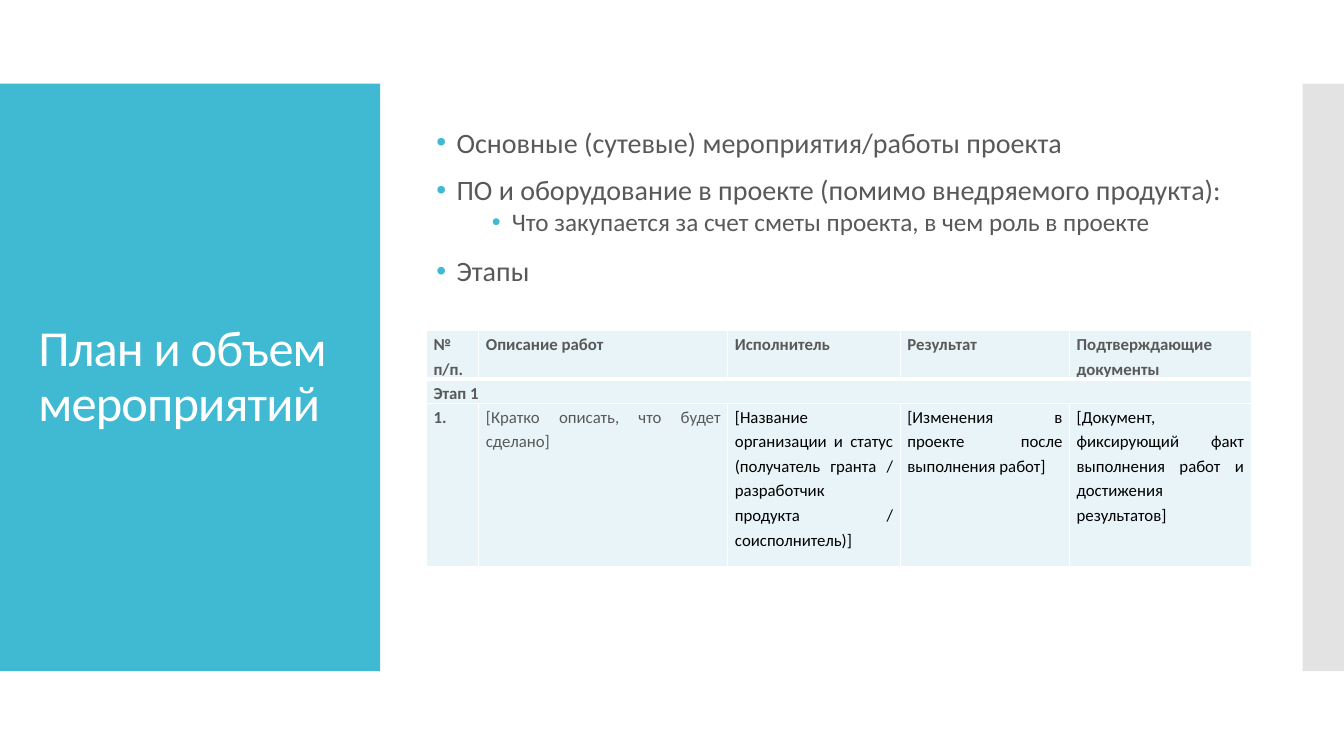
"""Build the slide with the project's plan and scope of work."""
from pptx import Presentation
from pptx.dml.color import RGBColor
from pptx.enum.shapes import MSO_SHAPE
from pptx.enum.text import MSO_ANCHOR, MSO_AUTO_SIZE, PP_ALIGN
from pptx.oxml import parse_xml
from pptx.oxml.ns import nsdecls
from pptx.util import Inches, Pt

TEAL = RGBColor(0x40, 0xBA, 0xD2)
SILVER = RGBColor(0xE3, 0xE3, 0xE3)
WHITE = RGBColor(0xFF, 0xFF, 0xFF)
GREY = RGBColor(0x59, 0x59, 0x59)
BLACK = RGBColor(0, 0, 0)
PALE = RGBColor(0xE8, 0xF4, 0xF7)
FONT = "Calibri"

TITLE = "План и объем мероприятий"
POINTS = [
    (0, "Основные (сутевые) мероприятия/работы проекта"),
    (0, "ПО и оборудование в проекте (помимо внедряемого продукта):"),
    (1, "Что закупается за счет сметы проекта, в чем роль в проекте"),
    (0, "Этапы"),
]
LEVELS = [
    {"size": 20, "left": 0.2, "before": 12, "after": 0},
    {"size": 18, "left": 0.75, "before": 2.5, "after": 2.5},
]
ROWS = [
    ["№ п/п.", "Описание работ", "Исполнитель", "Результат",
     "Подтверждающие документы"],
    ["Этап 1"],
    ["1. ", "[Кратко описать, что будет сделано]",
     "[Название организации и статус (получатель гранта / "
     "разработчик продукта / соисполнитель)]",
     "[Изменения в проекте после выполнения работ]",
     "[Документ, фиксирующий факт выполнения работ и достижения результатов]"],
]
WIDTHS = [0.52, 2.47, 1.71, 1.68, 1.8]
HEIGHTS = [0.43, 0.21, 1.62]
BARS = [(0, 3.77, TEAL), (12.92, 0.42, SILVER)]


def add_run(para, text, size, color, bold=False):
    """Add one styled run to a paragraph."""
    run = para.add_run()
    run.text = text
    font = run.font
    font.name, font.size, font.bold = FONT, Pt(size), bold
    font.color.rgb = color
    return run


def add_bars(slide):
    """Draw the two side panels."""
    for left, width, color in BARS:
        bar = slide.shapes.add_shape(
            MSO_SHAPE.RECTANGLE, Inches(left), Inches(0.83),
            Inches(width), Inches(5.83))
        bar.shadow.inherit = False
        bar.fill.solid()
        bar.fill.fore_color.rgb = color
        bar.line.fill.background()


def add_title(slide):
    """Place the title over the left panel."""
    title = slide.shapes.title
    title.left, title.top = Inches(0.28), Inches(1.23)
    title.width, title.height = Inches(3.22), Inches(5.03)
    slide.shapes._spTree.append(title._element)
    frame = title.text_frame
    frame.word_wrap = True
    frame.auto_size = MSO_AUTO_SIZE.NONE
    frame.vertical_anchor = MSO_ANCHOR.MIDDLE
    para = frame.paragraphs[0]
    para.alignment, para.line_spacing = PP_ALIGN.LEFT, 0.9
    run = add_run(para, TITLE, 36, WHITE)
    run._r.get_or_add_rPr().set("spc", "-60")


def add_points(slide):
    """Write the bulleted list."""
    box = slide.shapes.add_textbox(
        Inches(4.23), Inches(0.94), Inches(8), Inches(2.25))
    frame = box.text_frame
    frame.word_wrap = True
    frame.vertical_anchor = MSO_ANCHOR.MIDDLE
    for num, (level, text) in enumerate(POINTS):
        para = frame.add_paragraph() if num else frame.paragraphs[0]
        style = LEVELS[level]
        para.level, para.line_spacing = level, 0.9
        para.space_before = Pt(style["before"])
        para.space_after = Pt(style["after"])
        props = para._p.get_or_add_pPr()
        props.set("marL", str(Inches(style["left"])))
        props.set("indent", str(-Inches(0.2)))
        for xml in (
            f'<a:buClr {nsdecls("a")}><a:srgbClr val="{TEAL}"/></a:buClr>',
            f'<a:buFont {nsdecls("a")} typeface="Arial"/>',
            f'<a:buChar {nsdecls("a")} char="•"/>',
        ):
            props.append(parse_xml(xml))
        add_run(para, text, style["size"], GREY)


def style_cell(cell, head):
    """Fill a cell and give it white borders."""
    cell.fill.solid()
    cell.fill.fore_color.rgb = PALE
    cell.margin_left = cell.margin_right = Inches(0.07)
    cell.margin_top = cell.margin_bottom = 0
    props = cell._tc.get_or_add_tcPr()
    for spot, side in enumerate("LRTB"):
        width = Pt(3 if head and side == "B" else 1)
        props.insert(spot, parse_xml(
            f'<a:ln{side} {nsdecls("a")} w="{width}"><a:solidFill>'
            f'<a:srgbClr val="{WHITE}"/></a:solidFill></a:ln{side}>'))


def add_plan(slide):
    """Build the table of stages."""
    table = slide.shapes.add_table(
        len(ROWS), len(WIDTHS), Inches(4.23), Inches(3.28),
        Inches(sum(WIDTHS)), Inches(sum(HEIGHTS))).table
    for col, width in zip(table.columns, WIDTHS):
        col.width = Inches(width)
    for row, height in zip(table.rows, HEIGHTS):
        row.height = Inches(height)
        for cell in row.cells:
            style_cell(cell, row is table.rows[0] or height == HEIGHTS[0])
    table.cell(1, 0).merge(table.cell(1, len(WIDTHS) - 1))
    for y, texts in enumerate(ROWS):
        for x, text in enumerate(texts):
            para = table.cell(y, x).text_frame.paragraphs[0]
            para.alignment = PP_ALIGN.JUSTIFY
            para.line_spacing, para.space_after = 1.2, Pt(8)
            color = BLACK if y == 2 and x > 1 else GREY
            add_run(para, text, 12, color, y < 2 or x == 0)


def main():
    """Make and save the slide."""
    deck = Presentation()
    deck.slide_width, deck.slide_height = Inches(13.33), Inches(7.5)
    slide = deck.slides.add_slide(deck.slide_layouts[5])
    add_bars(slide)
    add_title(slide)
    add_points(slide)
    add_plan(slide)
    deck.save("out.pptx")


if __name__ == "__main__":
    main()
